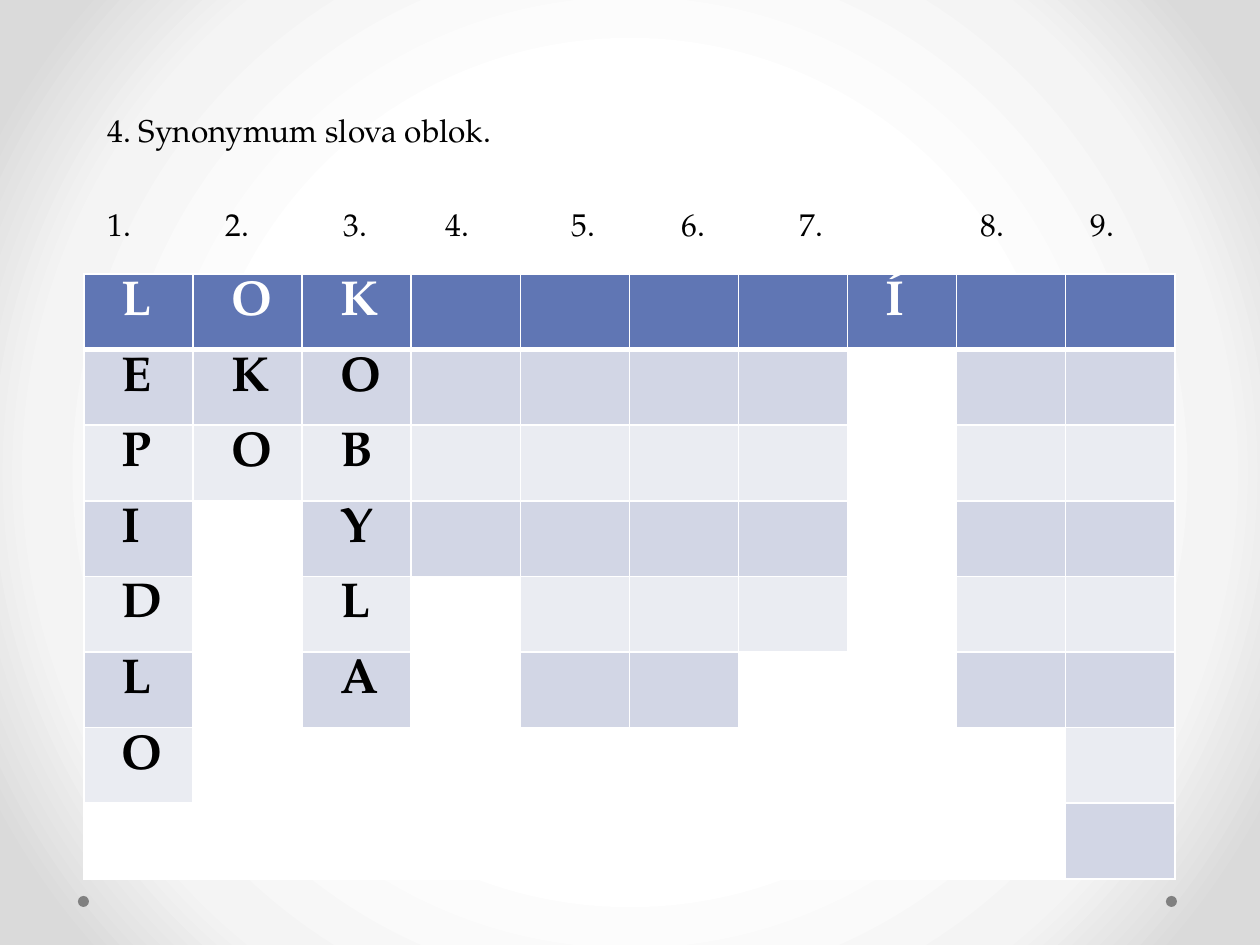
from pptx import Presentation
from pptx.dml.color import RGBColor
from pptx.enum.shapes import MSO_SHAPE as Shape
from pptx.oxml import parse_xml
from pptx.oxml.ns import nsdecls
from pptx.util import Emu, Pt

EMU_PER_INCH, PX_PER_INCH = 914400, 126
FONT = "TeX Gyre Pagella"
COLORS = {
    "header": "6076B4", "dark_band": "D2D6E5", "light_band": "EAECF2",
    "white": "FFFFFF", "black": "000000", "dot": "808080",
    "mist": "F4F4F4", "edge": "DADADA",
}
BACKGROUND_STOPS = [(50, "white"), (76, "mist"), (92, "edge")]
COLUMNS = [("LEPIDLO", 7), ("OKO", 3), ("KOBYLA", 6), ("", 4), ("", 6),
           ("", 6), ("", 5), ("Í", 1), ("", 6), ("", 8)]
ROW_COUNT = 8
NUMBER_TABS = [118, 236, 338, 464, 574, 692, 873, 983]
TEXT_LEFT = 95


def px(value):
    """Turn pixels into EMU."""
    return Emu(round(value * EMU_PER_INCH / PX_PER_INCH))


def color(name):
    """Look up a named colour."""
    return RGBColor.from_string(COLORS[name])


def apply_format(target, values):
    """Set attributes from a dict of format values."""
    for name, value in values.items():
        setattr(target, name, value)


def add_run(paragraph, text, color_name, **values):
    """Add a formatted run to a paragraph."""
    run = paragraph.add_run()
    run.text = text
    apply_format(run.font, {"name": FONT, **values})
    run.font.color.rgb = color(color_name)


def set_background(slide):
    """Fill the slide with a circular gradient."""
    stops = "".join(
        f'<a:gs pos="{position * 1000}"><a:srgbClr val="{COLORS[name]}"/></a:gs>'
        for position, name in BACKGROUND_STOPS)
    slide.element.cSld.insert(0, parse_xml(
        f'<p:bg {nsdecls("p", "a")}><p:bgPr><a:gradFill rotWithShape="1">'
        f'<a:gsLst>{stops}</a:gsLst><a:path path="circle">'
        '<a:fillToRect l="50000" t="50000" r="50000" b="50000"/></a:path>'
        '</a:gradFill><a:effectLst/></p:bgPr></p:bg>'))


def add_dot(slide, left):
    """Add a small grey corner dot."""
    dot = slide.shapes.add_shape(Shape.OVAL, px(left), px(896), px(11), px(11))
    dot.shadow.inherit = False
    dot.fill.solid()
    dot.fill.fore_color.rgb = color("dot")
    dot.line.fill.background()


def add_text(slide, top, width, text, tabs=()):
    """Add a line of text with optional tab stops."""
    box = slide.shapes.add_textbox(px(TEXT_LEFT), px(top), px(width), px(50))
    box.text_frame.word_wrap = False
    paragraph = box.text_frame.paragraphs[0]
    add_run(paragraph, text, "black", size=Pt(18))
    if tabs:
        stops = "".join(f'<a:tab pos="{px(tab)}" algn="l"/>' for tab in tabs)
        properties = paragraph._p.get_or_add_pPr()
        properties.append(parse_xml(
            f'<a:tabLst {nsdecls("a")}>{stops}</a:tabLst>'))


def set_borders(cell, row):
    """Draw white cell borders, thicker below the header row."""
    widths = {"lnL": 1, "lnR": 1, "lnT": 3 if row == 1 else 1,
              "lnB": 3 if row == 0 else 1}
    properties = cell._tc.get_or_add_tcPr()
    for index, (side, width) in enumerate(widths.items()):
        properties.insert(index, parse_xml(
            f'<a:{side} {nsdecls("a")} w="{Pt(width)}"><a:solidFill>'
            f'<a:srgbClr val="{COLORS["white"]}"/></a:solidFill></a:{side}>'))


def band_color(row, length):
    """Choose the fill of a cell in a column of the given length."""
    if row >= length:
        return "white"
    if row == 0:
        return "header"
    return "dark_band" if row % 2 else "light_band"


def fill_cell(cell, row, word, length):
    """Format one crossword cell and write its letter."""
    cell.margin_left = px(38)
    cell.fill.solid()
    cell.fill.fore_color.rgb = color(band_color(row, length))
    set_borders(cell, row)
    if row < len(word):
        add_run(cell.text_frame.paragraphs[0], word[row],
                "black" if row else "white", size=Pt(28), bold=True)


def add_crossword(slide):
    """Add the crossword with one word in each column."""
    table = slide.shapes.add_table(ROW_COUNT, len(COLUMNS), px(84), px(274),
                                   px(1091), px(605)).table
    table.horz_banding = False
    for column, (word, length) in enumerate(COLUMNS):
        for row in range(ROW_COUNT):
            fill_cell(table.cell(row, column), row, word, length)


def main():
    """Build and save the crossword slide."""
    presentation = Presentation()
    apply_format(presentation, {"slide_width": px(1260), "slide_height": px(945)})
    slide = presentation.slides.add_slide(presentation.slide_layouts[6])
    set_background(slide)
    for left in (1166, 78):
        add_dot(slide, left)
    add_crossword(slide)
    numbers = "\t".join(f"{number}." for number in range(1, 10))
    add_text(slide, 199, 1067, numbers, NUMBER_TABS)
    add_text(slide, 105, 416, "4. Synonymum slova oblok.")
    presentation.save("out.pptx")


if __name__ == "__main__":
    main()
